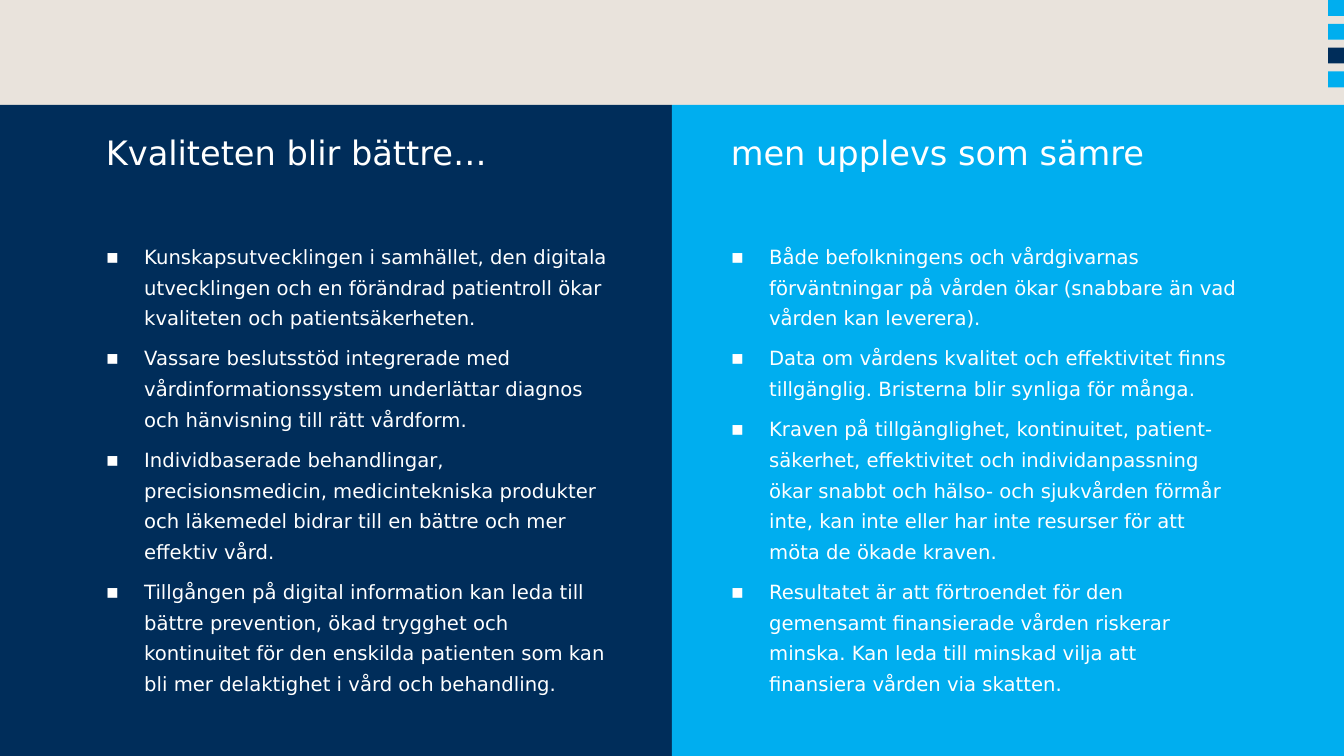
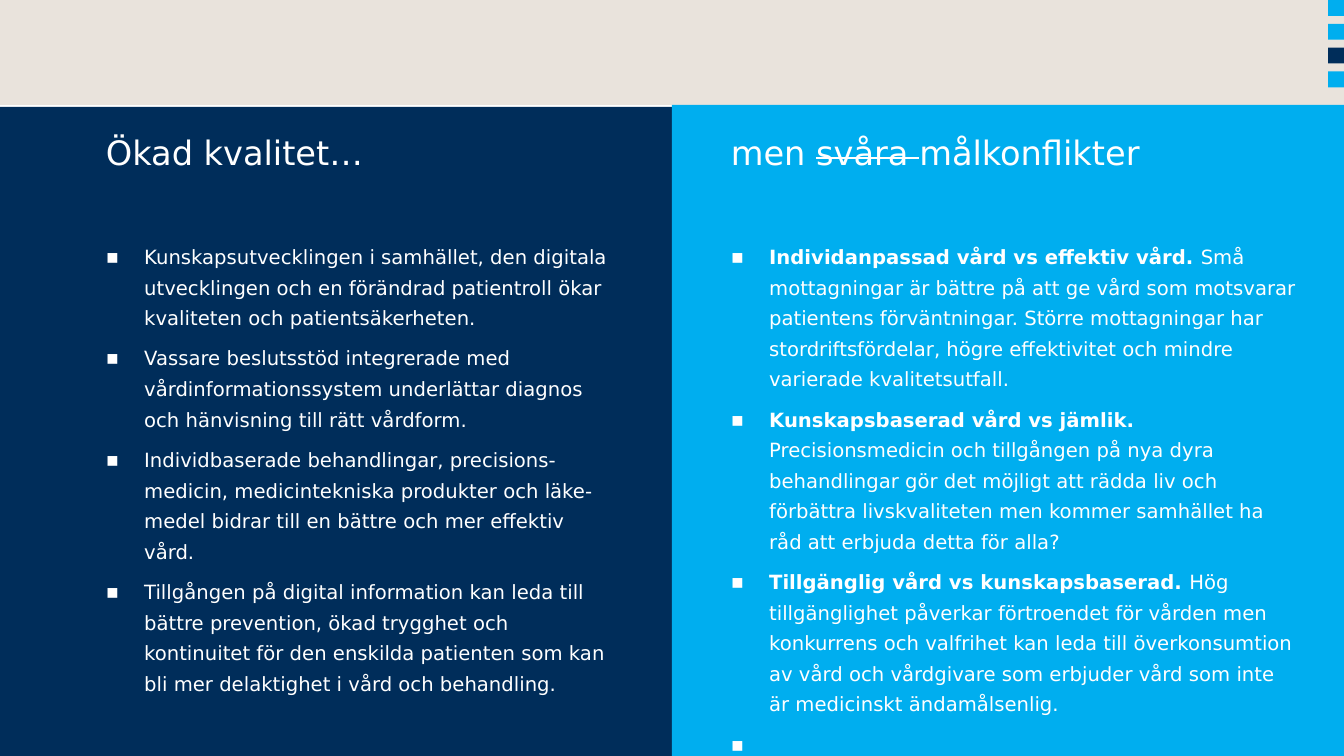
"""Build two slides that set care quality against how it is experienced."""
from dataclasses import dataclass
from typing import NamedTuple

from lxml.etree import SubElement
from pptx import Presentation
from pptx.dml.color import RGBColor
from pptx.enum.shapes import MSO_SHAPE
from pptx.enum.text import MSO_ANCHOR
from pptx.oxml.ns import qn
from pptx.util import Inches, Pt


@dataclass(frozen=True)
class Theme:
    font: str = "DejaVu Sans"
    title_size: int = 24
    body_size: int = 14
    sand: str = "E9E3DC"
    navy: str = "002D5A"
    sky: str = "00AEEF"
    text: str = "FFFFFF"
    bullet: str = "▪"
    bullet_indent: float = 0.38
    line_spacing: float = 1.3
    space_before: int = 5
    space_after: int = 2


class Box(NamedTuple):
    """Left, top, width and height in percent of the slide."""
    x: float
    y: float
    w: float
    h: float


class Span(NamedTuple):
    text: str
    bold: bool = False
    strike: bool = False


class Side(NamedTuple):
    """Fixed placement and colour of one half of the slide."""
    x: float
    text_x: float
    fill: str


class Panel(NamedTuple):
    """Content of one half of the slide."""
    title: list[Span]
    bullets: list[list[Span]]
    top: float = 13.87
    body_w: float = 37.8


THEME = Theme()
WIDTH, HEIGHT = Inches(13.33), Inches(7.5)
BAND_H = 13.87
TITLE_Y, TITLE_W, TITLE_H = 17.47, 37.8, 7.87
BODY_Y, BODY_H = 31.47, 57.47
MARK_W, MARK_H, MARK_PITCH = 1.19, 2.11, 3.15
MARKS = (THEME.sky, THEME.sky, THEME.navy, THEME.sky)
SIDES = (Side(0, 7.88, THEME.navy), Side(50, 54.38, THEME.sky))


def quality_bullets(treatments: str) -> list[list[Span]]:
    """Return the quality gains, with the given wording on treatments."""
    return [
        [Span("Kunskapsutvecklingen i samhället, den digitala utvecklingen och en förändrad "
              "patientroll ökar kvaliteten och patientsäkerheten.")],
        [Span("Vassare beslutsstöd integrerade med vårdinformationssystem underlättar diagnos "
              "och hänvisning till rätt vårdform.")],
        [Span(f"Individbaserade behandlingar, {treatments} bidrar till en bättre och mer "
              "effektiv vård.")],
        [Span("Tillgången på digital information kan leda till bättre prevention, ökad trygghet "
              "och kontinuitet för den enskilda patienten som kan bli mer delaktighet i vård "
              "och behandling.")],
    ]


SLIDES = (
    (
        Panel(
            [Span("Kvaliteten blir bättre…")],
            quality_bullets("precisionsmedicin, medicintekniska produkter och läkemedel"),
        ),
        Panel(
            [Span("men upplevs som sämre")],
            [
                [Span("Både befolkningens och vårdgivarnas förväntningar på vården ökar "
                      "(snabbare än vad vården kan leverera).")],
                [Span("Data om vårdens kvalitet och effektivitet finns tillgänglig. Bristerna "
                      "blir synliga för många.")],
                [Span("Kraven på tillgänglighet, kontinuitet, patient-säkerhet, effektivitet "
                      "och individanpassning ökar snabbt och hälso- och sjukvården förmår "
                      "inte, kan inte eller har inte resurser för att möta de ökade kraven.")],
                [Span("Resultatet är att förtroendet för den gemensamt finansierade vården "
                      "riskerar minska. Kan leda till minskad vilja att finansiera vården "
                      "via skatten.")],
            ],
        ),
    ),
    (
        Panel(
            [Span("Ökad kvalitet…")],
            quality_bullets("precisions-medicin, medicintekniska produkter och läke-medel"),
            top=14.13,
        ),
        Panel(
            [Span("men "), Span("svåra ", strike=True), Span("målkonflikter")],
            [
                [Span("Individanpassad vård vs effektiv vård. ", bold=True),
                 Span("Små mottagningar är bättre på att ge vård som motsvarar patientens "
                      "förväntningar. Större mottagningar har stordriftsfördelar, högre "
                      "effektivitet och mindre varierade kvalitetsutfall.")],
                [Span("Kunskapsbaserad vård vs jämlik. ", bold=True),
                 Span("Precisionsmedicin och tillgången på nya dyra behandlingar gör det "
                      "möjligt att rädda liv och förbättra livskvaliteten men kommer "
                      "samhället ha råd att erbjuda detta för alla?")],
                [Span("Tillgänglig vård vs kunskapsbaserad. ", bold=True),
                 Span("Hög tillgänglighet påverkar förtroendet för vården men konkurrens och "
                      "valfrihet kan leda till överkonsumtion av vård och vårdgivare som "
                      "erbjuder vård som inte är medicinskt ändamålsenlig.")],
                [Span(" ")],
            ],
            body_w=42.3,
        ),
    ),
)


def place(box: Box) -> tuple[int, int, int, int]:
    """Convert shares of the slide to lengths."""
    return (int(WIDTH * box.x / 100), int(HEIGHT * box.y / 100),
            int(WIDTH * box.w / 100), int(HEIGHT * box.h / 100))


def add_block(slide, box: Box, color: str) -> None:
    """Draw a plain filled rectangle."""
    sp = slide.shapes.add_shape(MSO_SHAPE.RECTANGLE, *place(box))
    sp.shadow.inherit = False
    sp.fill.solid()
    sp.fill.fore_color.rgb = RGBColor.from_string(color)
    sp.line.fill.background()


def add_text_frame(slide, box: Box):
    """Add a wrapping text box without margins and return its frame."""
    tf = slide.shapes.add_textbox(*place(box)).text_frame
    tf.word_wrap = True
    tf.vertical_anchor = MSO_ANCHOR.TOP
    tf.margin_left = tf.margin_top = tf.margin_right = tf.margin_bottom = 0
    return tf


def add_spans(p, spans: list[Span], size: int) -> None:
    """Write the spans of one paragraph run by run."""
    for span in spans:
        r = p.add_run()
        r.text = span.text
        r.font.name = THEME.font
        r.font.size = Pt(size)
        r.font.bold = span.bold
        r.font.color.rgb = RGBColor.from_string(THEME.text)
        if span.strike:
            r._r.get_or_add_rPr().set("strike", "sngStrike")


def format_bullet(p, first: bool) -> None:
    """Give a paragraph its spacing, hanging indent and bullet."""
    p.line_spacing = THEME.line_spacing
    p.space_before = Pt(0 if first else THEME.space_before)
    p.space_after = Pt(THEME.space_after)
    pPr = p._p.get_or_add_pPr()
    indent = Inches(THEME.bullet_indent)
    pPr.set("marL", str(indent))
    pPr.set("indent", str(-indent))
    SubElement(pPr, qn("a:buFont")).set("typeface", THEME.font)
    SubElement(pPr, qn("a:buChar")).set("char", THEME.bullet)


def add_frame(slide) -> None:
    """Draw the top band and the column of corner marks."""
    add_block(slide, Box(0, 0, 100, BAND_H), THEME.sand)
    for row, color in enumerate(MARKS):
        add_block(slide, Box(100 - MARK_W, row * MARK_PITCH, MARK_W, MARK_H), color)


def add_panel(slide, side: Side, panel: Panel) -> None:
    """Draw one half with its heading and bullets."""
    add_block(slide, Box(side.x, panel.top, 50, 100 - panel.top), side.fill)
    title = add_text_frame(slide, Box(side.text_x, TITLE_Y, TITLE_W, TITLE_H))
    add_spans(title.paragraphs[0], panel.title, THEME.title_size)
    body = add_text_frame(slide, Box(side.text_x, BODY_Y, panel.body_w, BODY_H))
    for i, spans in enumerate(panel.bullets):
        p = body.add_paragraph() if i else body.paragraphs[0]
        format_bullet(p, first=i == 0)
        add_spans(p, spans, THEME.body_size)


def main() -> None:
    """Build and save the presentation."""
    prs = Presentation()
    prs.slide_width, prs.slide_height = WIDTH, HEIGHT
    for panels in SLIDES:
        slide = prs.slides.add_slide(prs.slide_layouts[6])
        add_frame(slide)
        for side, panel in zip(SIDES, panels):
            add_panel(slide, side, panel)
    prs.save("out.pptx")


if __name__ == "__main__":
    main()
